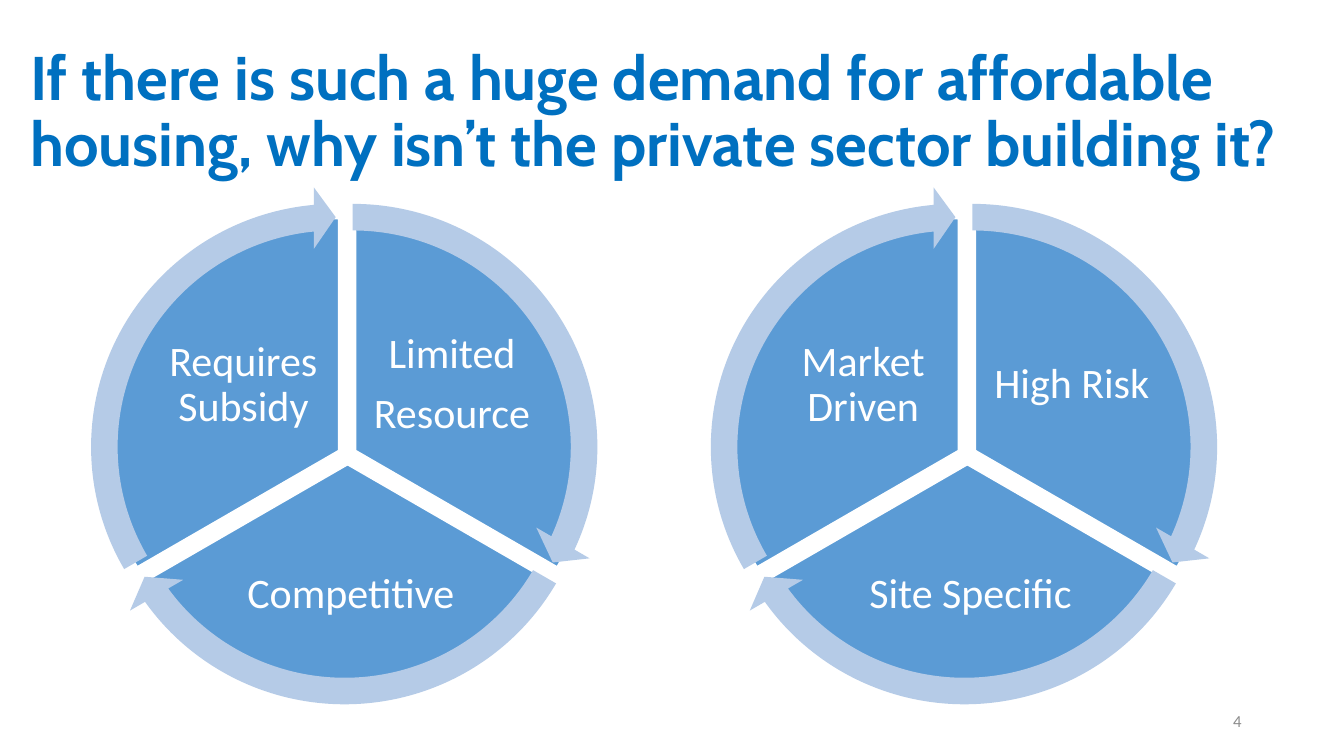
from pptx import Presentation
from pptx.dml.color import RGBColor
from pptx.enum.shapes import MSO_SHAPE as Shape
from pptx.enum.text import MSO_ANCHOR as Anchor, PP_ALIGN as Align
from pptx.util import Pt

BLUE = RGBColor(0x00, 0x70, 0xC0)
SLICE = RGBColor(0x5B, 0x9B, 0xD5)
ARROW = RGBColor(0xB5, 0xCB, 0xE7)
WHITE = RGBColor(0xFF, 0xFF, 0xFF)
GRAY = RGBColor(0x8C, 0x8C, 0x8C)

# Each slice: left, top, pie angles, arrow angles (100000 units)
SLICES = [
    (87.8, 156.2, (162, 18), (14.73, 161.99)),
    (82, 166.4, (18, 90), (86.72, 18.01)),
    (75.6, 156.2, (90, 162), (158.73, 90)),
]
# Label boxes in slice order
LABELS = [
    (263.5, 226, 118.8, 98.6),
    (161.3, 381.6, 178.6, 86.4),
    (114.5, 226, 118.8, 98.6),
]
WHEELS = [
    (0, [["Limited", "Resource"], ["Competitive"], ["Requires Subsidy"]]),
    (442.7, [["High Risk"], ["Site Specific"], ["Market Driven"]]),
]


class Deck:
    font = "Calibri"
    rim = 23  # how far an arrow's frame reaches beyond its pie

    def __init__(self):
        self.prs = Presentation()
        self.prs.slide_width, self.prs.slide_height = Pt(960), Pt(540)
        self.slide = self.prs.slides.add_slide(self.prs.slide_layouts[6])

    def text(self, box, lines, size, color, align, font=None, bold=False,
             space=1, after=0, inset=None):
        frame = self.slide.shapes.add_textbox(*map(Pt, box)).text_frame
        frame.word_wrap = True
        frame.vertical_anchor = Anchor.MIDDLE
        if inset is not None:
            frame.margin_left = frame.margin_right = Pt(inset)
            frame.margin_top = frame.margin_bottom = Pt(inset)
        for i, line in enumerate(lines):
            para = frame.add_paragraph() if i else frame.paragraphs[0]
            para.alignment = align
            para.line_spacing = space
            para.space_after = Pt(after)
            run = para.add_run()
            run.text = line
            run.font.name = font or self.font
            run.font.size = Pt(size)
            run.font.bold = bold
            run.font.color.rgb = color

    def shape(self, kind, box, angles, fill):
        item = self.slide.shapes.add_shape(kind, *map(Pt, box))
        item.shadow.inherit = False
        item.fill.solid()
        item.fill.fore_color.rgb = fill
        for i, angle in enumerate(angles):
            item.adjustments[i] = angle
        return item

    def pie(self, left, top, angles):
        item = self.shape(Shape.PIE, (left, top, 332.6, 331.2), angles, SLICE)
        item.line.color.rgb = WHITE
        item.line.width = Pt(1)

    def arrow(self, left, top, ends):
        box = (left - self.rim, top - self.rim, 374.4, 372.2)
        sizes = (0.051, 3.275, *ends, 0.059)
        item = self.shape(Shape.CIRCULAR_ARROW, box, sizes, ARROW)
        item.line.fill.background()

    def wheel(self, shift, labels):
        for left, top, angles, _ in SLICES:
            self.pie(left + shift, top, angles)
        for left, top, _, ends in SLICES:
            self.arrow(left + shift, top, ends)
        for (left, *rest), lines in zip(LABELS, labels):
            self.text((left + shift, *rest), lines, 30, WHITE, Align.CENTER,
                      space=0.9, after=10.5, inset=3)


def main():
    deck = Deck()
    # Title
    deck.text((14.4, 28.8, 935.3, 104.4),
              ["If there is such a huge demand for affordable housing, "
               "why isn’t the private sector building it?"],
              44, BLUE, Align.LEFT, font="Cabin", bold=True, space=0.9)
    # Two wheels of three slices
    for shift, labels in WHEELS:
        deck.wheel(shift, labels)
    # Page number
    deck.text((678, 500.4, 216, 28.8), ["4"], 12, GRAY, Align.RIGHT)
    deck.prs.save("out.pptx")


if __name__ == "__main__":
    main()
